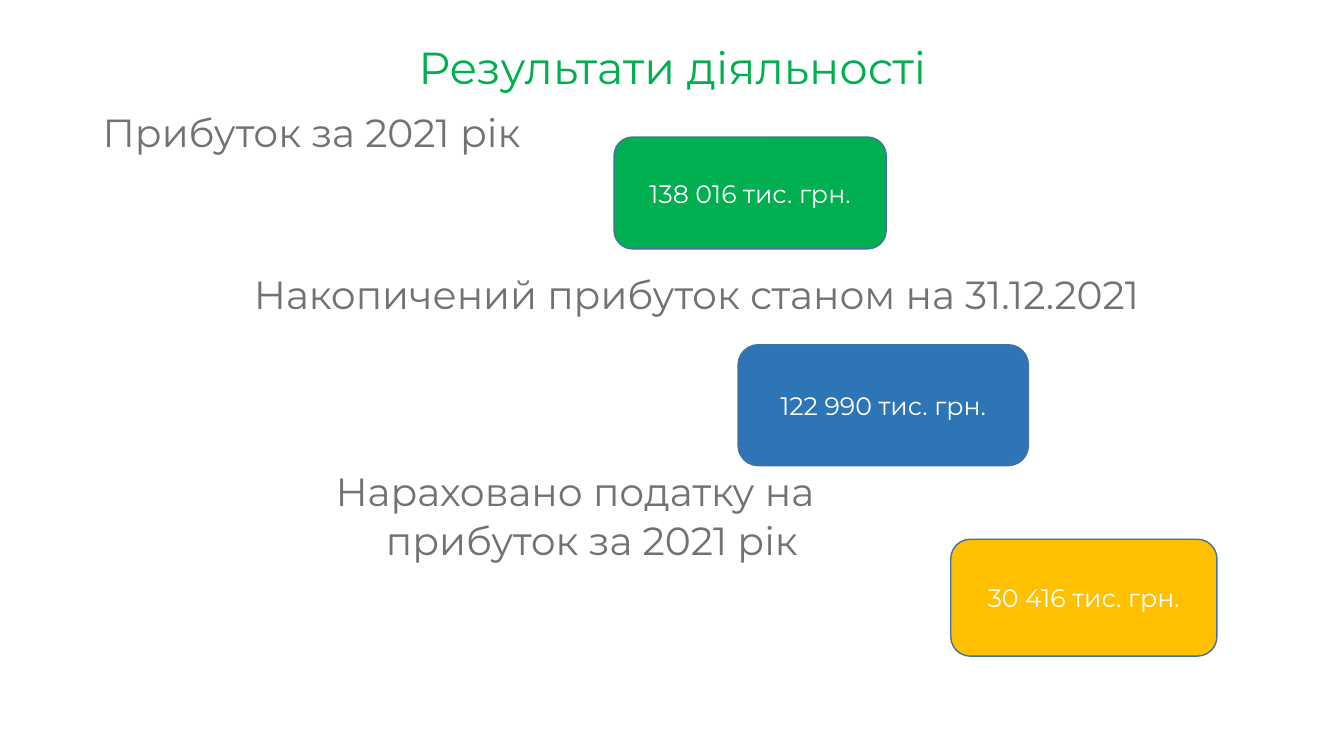
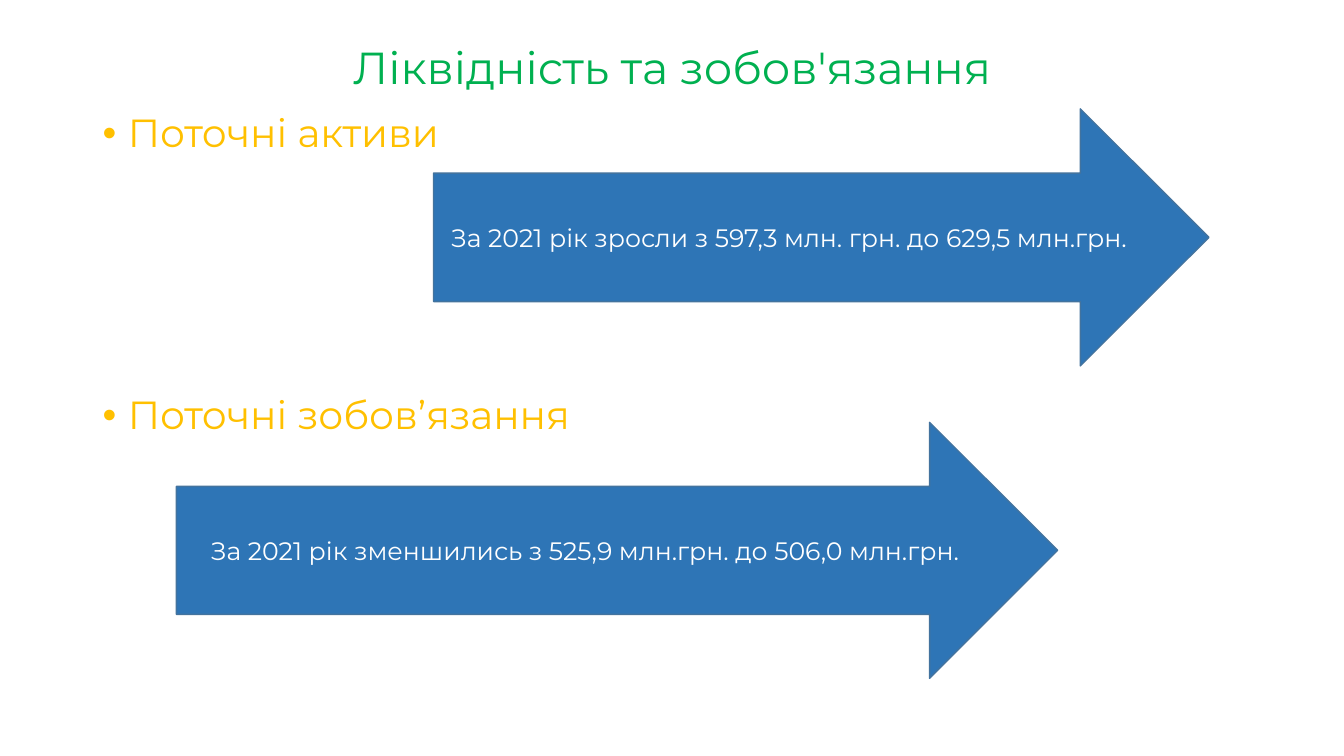
from lxml import etree
from pptx import Presentation
from pptx.dml.color import RGBColor
from pptx.enum.shapes import MSO_SHAPE
from pptx.enum.text import MSO_ANCHOR, PP_ALIGN
from pptx.oxml.ns import qn
from pptx.util import Inches, Pt

ROUNDED = MSO_SHAPE.ROUNDED_RECTANGLE
ARROW = MSO_SHAPE.RIGHT_ARROW
CENTER = PP_ALIGN.CENTER
MIDDLE = MSO_ANCHOR.MIDDLE

FONT = "Montserrat"
COLORS = {
    "green": "00B050", "blue": "2E75B6", "gold": "FFC000",
    "gray": "767171", "outline": "43739E", "white": "FFFFFF",
}
TITLE_SIZE, LABEL_SIZE, FIGURE_SIZE = 32, 28, 18
LEFT, CONTENT_WIDTH = 0.92, 11.5
CONTENT_RIGHT = LEFT + CONTENT_WIDTH
BULLET_INDENT = 0.25

# Labels: (left, top, [(line, indent), ...]); figures: (box, fill, text)
SLIDES = [
    {
        "title": "Результати діяльності",
        "label_color": "gray",
        "bulleted": False,
        "labels": [
            (LEFT, 1.08, [("Прибуток за 2021 рік", 0)]),
            (2.42, 2.69, [("Накопичений прибуток станом на 31.12.2021", 0)]),
            (3.23, 4.64, [("Нараховано податку на", 0),
                          ("прибуток за 2021 рік", 0.5)]),
        ],
        "figure_shape": ROUNDED,
        "figures": [
            ((6.09, 1.36, 2.7, 1.11), "green", "138 016 тис. грн."),
            ((7.32, 3.42, 2.88, 1.2), "blue", "122 990 тис. грн."),
            ((9.43, 5.35, 2.64, 1.16), "gold", "30 416 тис. грн."),
        ],
    },
    {
        "title": "Ліквідність та зобов'язання",
        "label_color": "gold",
        "bulleted": True,
        "labels": [
            (LEFT, 1.08, [("Поточні активи", BULLET_INDENT)]),
            (LEFT, 3.88, [("Поточні зобов’язання", BULLET_INDENT)]),
        ],
        "figure_shape": ARROW,
        "figures": [
            ((4.3, 1.08, 7.69, 2.55), "blue",
             "За 2021 рік зросли з 597,3 млн. грн. до 629,5 млн.грн."),
            ((1.75, 4.19, 8.74, 2.54), "blue",
             "За 2021 рік зменшились з 525,9 млн.грн. до 506,0 млн.грн."),
        ],
    },
]


def rgb(color):
    return RGBColor.from_string(COLORS[color])


def add_run(paragraph, text, size, color):
    run = paragraph.add_run()
    run.text = text
    run.font.name = FONT
    run.font.size = Pt(size)
    run.font.color.rgb = rgb(color)


def indent_line(paragraph, indent, bulleted):
    """Set the left margin, with a hanging bullet if asked."""
    properties = paragraph._p.get_or_add_pPr()
    properties.set("marL", str(Inches(indent)))
    if bulleted:
        properties.set("indent", str(-Inches(indent)))
        etree.SubElement(properties, qn("a:buFont")).set("typeface", "Arial")
        etree.SubElement(properties, qn("a:buChar")).set("char", "•")


def set_title(slide, text):
    title = slide.shapes.title
    title.left, title.top = Inches(LEFT), Inches(0.4)
    title.width, title.height = Inches(CONTENT_WIDTH), Inches(0.58)
    title.text_frame.vertical_anchor = MIDDLE
    paragraph = title.text_frame.paragraphs[0]
    paragraph.alignment = CENTER
    paragraph.line_spacing = 0.9
    add_run(paragraph, text, TITLE_SIZE, "green")


def add_label(slide, left, top, lines, color, bulleted):
    label = slide.shapes.add_textbox(
        Inches(left), Inches(top),
        Inches(CONTENT_RIGHT - left), Inches(0.1 + 0.5 * len(lines)))
    frame = label.text_frame
    frame.word_wrap = True
    for number, (text, indent) in enumerate(lines):
        paragraph = frame.add_paragraph() if number else frame.paragraphs[0]
        paragraph.line_spacing = 0.9
        if number:
            paragraph.space_before = Pt(5)
        indent_line(paragraph, indent, bulleted)
        add_run(paragraph, text, LABEL_SIZE, color)


def add_figure(slide, preset, box, fill, text):
    figure = slide.shapes.add_shape(preset, *map(Inches, box))
    figure.shadow.inherit = False
    figure.fill.solid()
    figure.fill.fore_color.rgb = rgb(fill)
    figure.line.color.rgb = rgb("outline")
    figure.line.width = Pt(1)
    frame = figure.text_frame
    frame.word_wrap = True
    frame.vertical_anchor = MIDDLE
    frame.paragraphs[0].alignment = CENTER
    add_run(frame.paragraphs[0], text, FIGURE_SIZE, "white")


def main():
    deck = Presentation()
    deck.slide_width, deck.slide_height = Inches(13.33), Inches(7.5)
    title_only = deck.slide_layouts[5]
    for content in SLIDES:
        slide = deck.slides.add_slide(title_only)
        set_title(slide, content["title"])
        for left, top, lines in content["labels"]:
            add_label(slide, left, top, lines,
                      content["label_color"], content["bulleted"])
        for box, fill, text in content["figures"]:
            add_figure(slide, content["figure_shape"], box, fill, text)
    deck.save("out.pptx")


if __name__ == "__main__":
    main()
